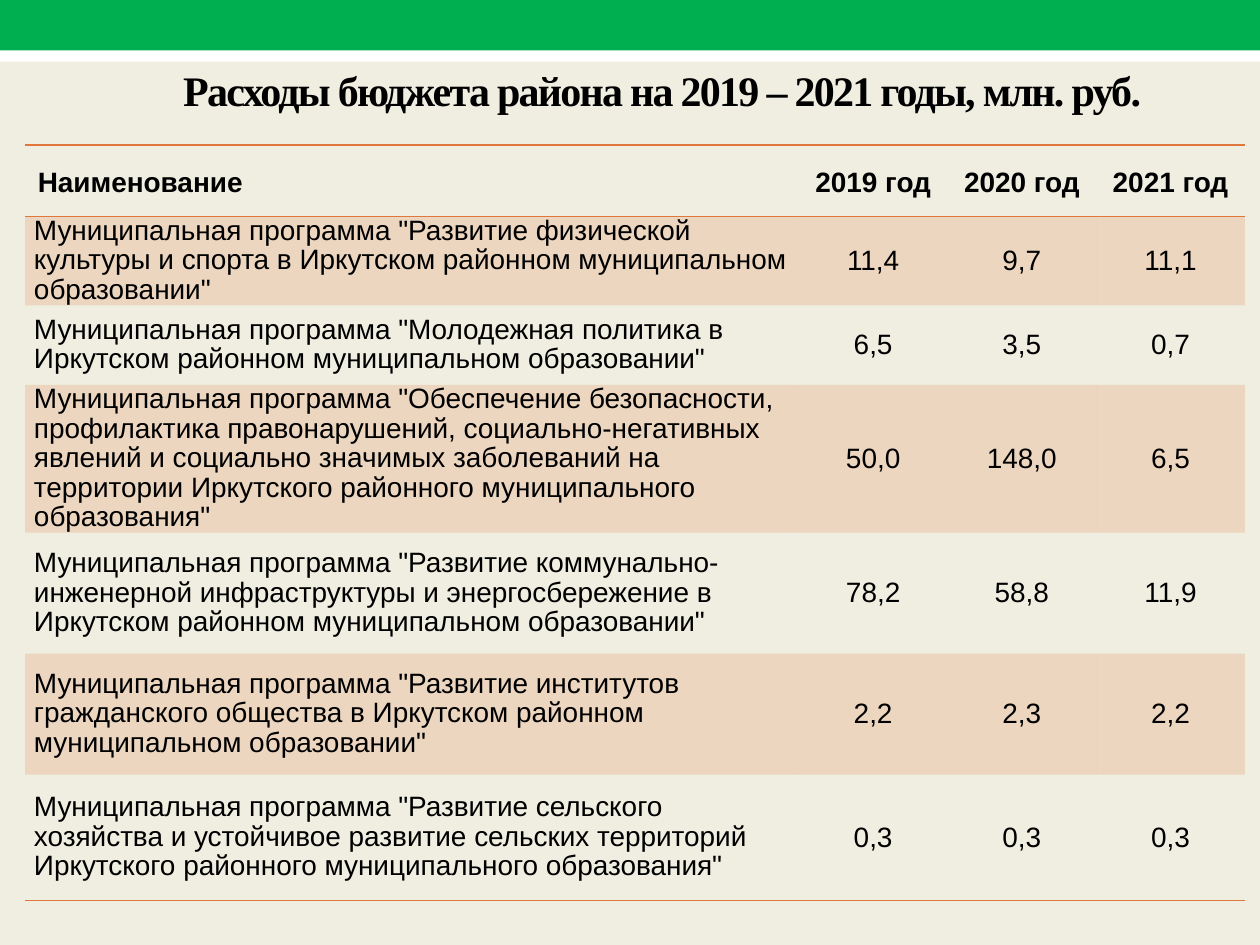
from lxml.etree import SubElement
from pptx import Presentation
from pptx.dml.color import RGBColor
from pptx.enum.shapes import MSO_SHAPE as Shape
from pptx.enum.text import MSO_ANCHOR as Anchor, PP_ALIGN as Align
from pptx.oxml.ns import qn
from pptx.util import Inches, Pt

COLORS = {"page": "EFEEE1", "green": "00B050", "white": "FFFFFF",
          "accent": "E0773C", "text": "000000"}
PLAIN_GRID = "{2D5ABB26-0587-4C30-8999-92F81FD0307C}"
COLUMN_WIDTHS = [6.14, 1.18, 1.18, 1.18]
ROW_HEIGHTS = [0.57, 0.69, 0.63, 1.1, 0.96, 0.96, 1]
HEADINGS = ["Наименование", "2019 год", "2020 год", "2021 год"]
PROGRAMS = [
    ("Развитие физической культуры и спорта в Иркутском районном "
     "муниципальном образовании", "11,4", "9,7", "11,1"),
    ("Молодежная политика в Иркутском районном муниципальном образовании",
     "6,5", "3,5", "0,7"),
    ("Обеспечение безопасности, профилактика правонарушений, "
     "социально-негативных явлений и социально значимых заболеваний на "
     "территории Иркутского районного муниципального образования",
     "50,0", "148,0", "6,5"),
    ("Развитие коммунально-инженерной инфраструктуры и энергосбережение в "
     "Иркутском районном муниципальном образовании", "78,2", "58,8", "11,9"),
    ("Развитие институтов гражданского общества в Иркутском районном "
     "муниципальном образовании", "2,2", "2,3", "2,2"),
    ("Развитие сельского хозяйства и устойчивое развитие сельских территорий "
     "Иркутского районного муниципального образования", "0,3", "0,3", "0,3"),
]


def rgb(name):
    return RGBColor.from_string(COLORS[name])


class BudgetSlide:
    def __init__(self, deck):
        self.slide = deck.slides.add_slide(deck.slide_layouts[5])
        background = self.slide.background.fill
        background.solid()
        background.fore_color.rgb = rgb("page")

    def add_text(self, paragraph, text, font, size, bold):
        run = paragraph.add_run()
        run.text = text
        run.font.name = font
        run.font.size = Pt(size)
        run.font.bold = bold
        run.font.color.rgb = rgb("text")
        return run

    def band(self, top, height, color):
        stripe = self.slide.shapes.add_shape(
            Shape.RECTANGLE, 0, Inches(top), Inches(10), Inches(height))
        stripe.shadow.inherit = False
        stripe.fill.solid()
        stripe.fill.fore_color.rgb = rgb(color)
        stripe.line.fill.background()

    def title(self, text):
        heading = self.slide.shapes.title
        heading.left, heading.top = Inches(0.51), Inches(0.44)
        heading.width, heading.height = Inches(9.49), Inches(0.52)
        frame = heading.text_frame
        frame.word_wrap = True
        frame.vertical_anchor = Anchor.BOTTOM
        paragraph = frame.paragraphs[0]
        paragraph.alignment = Align.CENTER
        run = self.add_text(paragraph, text, "Times New Roman", 24, True)
        run._r.get_or_add_rPr().set("spc", "-100")

    def rule(self, cell, side):
        line = SubElement(cell._tc.get_or_add_tcPr(), qn(f"a:{side}"), w=str(Pt(1)))
        fill = SubElement(line, qn("a:solidFill"))
        SubElement(fill, qn("a:srgbClr"), val=COLORS["accent"])

    def shade(self, cell, banded):
        if not banded:
            cell.fill.background()
            return
        cell.fill.solid()
        cell.fill.fore_color.rgb = rgb("accent")
        tint = cell._tc.tcPr.find(f"{qn('a:solidFill')}/{qn('a:srgbClr')}")
        SubElement(tint, qn("a:alpha"), val="20000")

    def table(self, rows):
        table = self.slide.shapes.add_table(
            len(rows), len(COLUMN_WIDTHS), Inches(0.2), Inches(1.15),
            Inches(sum(COLUMN_WIDTHS)), Inches(sum(ROW_HEIGHTS))).table
        table.first_row = table.horz_banding = False
        table._tbl.tblPr.find(qn("a:tableStyleId")).text = PLAIN_GRID
        for column, width in zip(table.columns, COLUMN_WIDTHS):
            column.width = Inches(width)
        for row, height in zip(table.rows, ROW_HEIGHTS):
            row.height = Inches(height)
        for r, values in enumerate(rows):
            for c, value in enumerate(values):
                self.cell(table.cell(r, c), value, r, c, r == len(rows) - 1)

    def cell(self, cell, value, row, column, last):
        header, name = row == 0, column == 0
        cell.vertical_anchor = Anchor.MIDDLE
        paragraph = cell.text_frame.paragraphs[0]
        paragraph.alignment = Align.LEFT if name else Align.CENTER
        if header:
            paragraph.line_spacing = 1.15
            self.rule(cell, "lnT")
        elif name:
            paragraph.line_spacing = 0.95
            cell.margin_left = cell.margin_right = Inches(0.07)
            cell.margin_top = cell.margin_bottom = 0
        if header or last:
            self.rule(cell, "lnB")
        self.shade(cell, row % 2 == 1)
        self.add_text(paragraph, value, "Arial", 16, header)


def main():
    deck = Presentation()
    deck.slide_width, deck.slide_height = Inches(10), Inches(7.5)
    budget = BudgetSlide(deck)
    budget.band(0.24, 0.25, "white")
    budget.band(0, 0.4, "green")
    budget.title("Расходы бюджета района на 2019 – 2021 годы, млн. руб.")
    budget.table([HEADINGS] + [
        [f'Муниципальная программа "{name}"', *amounts]
        for name, *amounts in PROGRAMS])
    deck.save("out.pptx")


if __name__ == "__main__":
    main()
